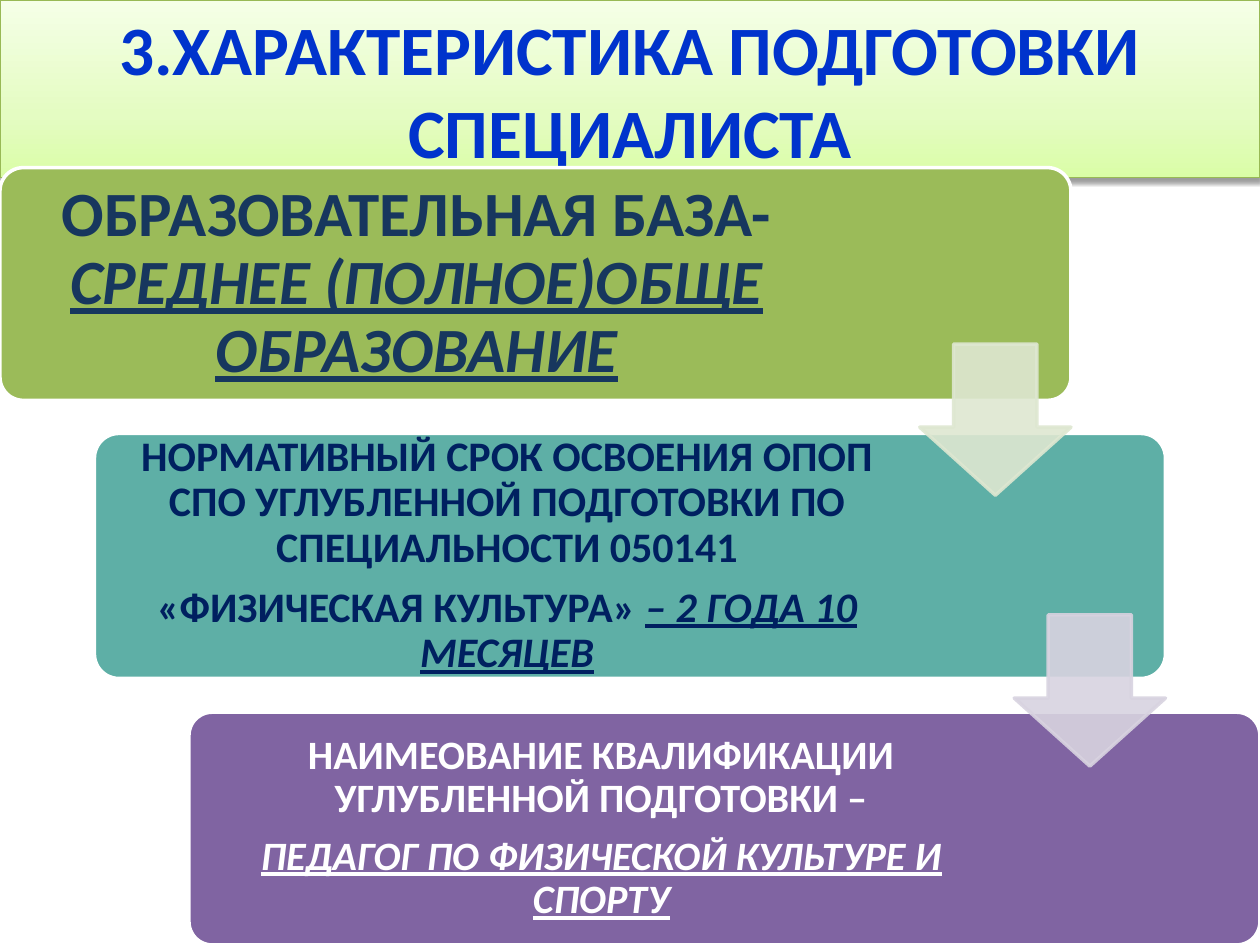
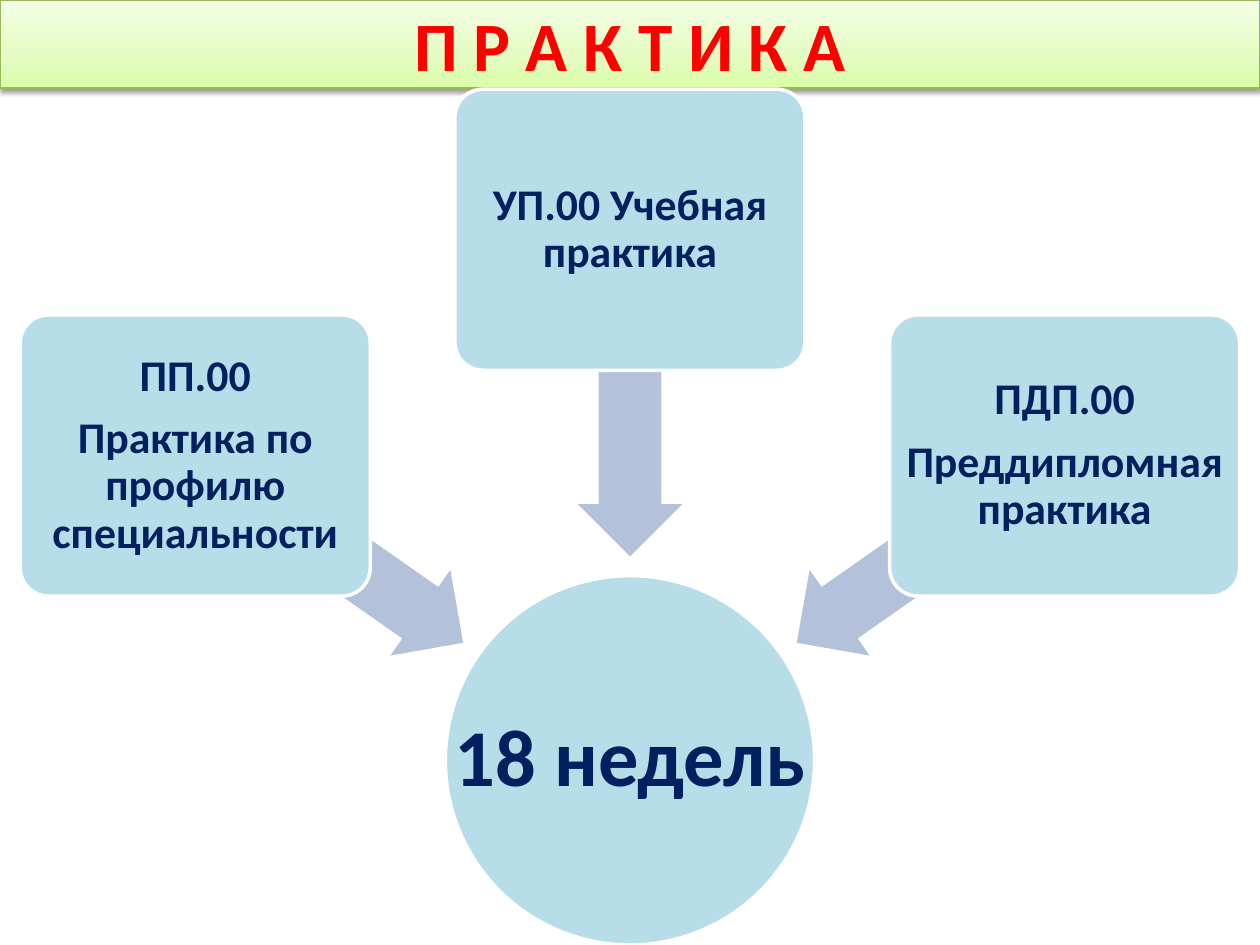
"""Build two slides on specialist training: programme steps and practice."""
from copy import deepcopy

from lxml.etree import SubElement
from pptx import Presentation
from pptx.dml.color import RGBColor
from pptx.enum.shapes import MSO_SHAPE as Shape
from pptx.enum.text import MSO_ANCHOR as Anchor, PP_ALIGN as Align
from pptx.oxml.ns import qn
from pptx.util import Pt

FONT = "Calibri"
WIDTH, HEIGHT = 720, 540

WHITE = RGBColor(0xFF, 0xFF, 0xFF)
BLACK = RGBColor(0x00, 0x00, 0x00)
NAVY = RGBColor(0x00, 0x20, 0x60)
SLATE = RGBColor(0x17, 0x37, 0x5E)
BLUE = RGBColor(0x00, 0x33, 0xCC)
RED = RGBColor(0xFF, 0x00, 0x00)
GREEN = RGBColor(0x9B, 0xBB, 0x59)
TEAL = RGBColor(0x5E, 0xAF, 0xA6)
PURPLE = RGBColor(0x80, 0x64, 0xA2)
PALE_GREEN = RGBColor(0xDE, 0xE7, 0xD1)
PALE_PURPLE = RGBColor(0xD8, 0xD3, 0xE0)
SKY = RGBColor(0xB7, 0xDE, 0xE8)
ARROW_BLUE = RGBColor(0xB3, 0xC1, 0xDB)
BAND_LINE = RGBColor(0x98, 0xB9, 0x55)
BAND_STOPS = [
    (0, RGBColor(0xDA, 0xFD, 0xA7)),
    (0.35, RGBColor(0xE4, 0xFC, 0xC2)),
    (1, RGBColor(0xF5, 0xFF, 0xE7)),
]

STEP_WIDTH, STEP_SHIFT = 612, 54
STEP_ARROW = 86.4
CARD_WIDTH, CARD_HEIGHT, CARD_PITCH = 200, 160.6, 248.4
HUB = 211


def add_box(slide, kind, left, top, width, height, fill=None, line=None,
            line_width=2, adjustments=()):
    """Add a preset shape without shadow; no line colour means no outline."""
    shape = slide.shapes.add_shape(kind, Pt(left), Pt(top), Pt(width), Pt(height))
    shape.shadow.inherit = False
    for index, value in enumerate(adjustments):
        shape.adjustments[index] = value
    if fill is not None:
        shape.fill.solid()
        shape.fill.fore_color.rgb = fill
    if line is None:
        shape.line.fill.background()
    else:
        shape.line.color.rgb = line
        shape.line.width = Pt(line_width)
    return shape


def write_text(shape, paragraphs, size, color, spacing=0.9, gap=0.35,
               left=0, right=0, wrap=True):
    """Write bold centred paragraphs of (text, emphasised) runs."""
    frame = shape.text_frame
    frame.word_wrap = wrap
    frame.vertical_anchor = Anchor.MIDDLE
    frame.margin_left, frame.margin_right = Pt(left), Pt(right)
    frame.margin_top = frame.margin_bottom = 0
    for index, runs in enumerate(paragraphs):
        paragraph = frame.add_paragraph() if index else frame.paragraphs[0]
        paragraph.alignment = Align.CENTER
        paragraph.line_spacing = spacing
        paragraph.space_before = Pt(round(size * gap, 1) if index else 0)
        for text, emphasised in runs:
            run = paragraph.add_run()
            run.text = text
            font = run.font
            font.name, font.size, font.bold = FONT, Pt(size), True
            font.color.rgb = color
            if emphasised:
                font.italic = font.underline = True


def set_opacity(parent, percent):
    """Set the opacity of every RGB colour below an element."""
    for color in parent.iter(qn("a:srgbClr")):
        SubElement(color, qn("a:alpha"), val=str(percent * 1000))


def add_title_band(slide, text, height, color):
    """Add the full-width gradient band with its soft shadow and title."""
    band = add_box(slide, Shape.RECTANGLE, 0, 0, WIDTH, height,
                   line=BAND_LINE, line_width=0.75)
    band.fill.gradient()
    band.fill.gradient_angle = 90
    properties = band._element.spPr
    stop_list = properties.find(qn("a:gradFill")).find(qn("a:gsLst"))
    stop_list.insert(1, deepcopy(stop_list[0]))
    for stop, (position, stop_color) in zip(band.fill.gradient_stops, BAND_STOPS):
        stop.position = position
        stop.color.rgb = stop_color
    shadow = SubElement(properties.find(qn("a:effectLst")), qn("a:outerShdw"),
                        blurRad=str(Pt(3.1)), dist=str(Pt(1.6)),
                        dir="5400000", rotWithShape="0")
    SubElement(shadow, qn("a:srgbClr"), val=str(BLACK))
    set_opacity(shadow, 38)
    write_text(band, [[(text, False)]], 39.6, color, spacing=1, left=7.2, right=7.2)


def add_step(slide, index, top, height, fill, paragraphs, size, color, left, right):
    """Add one step of the staircase, its text kept left of the arrows."""
    step = add_box(slide, Shape.ROUNDED_RECTANGLE, index * STEP_SHIFT, top,
                   STEP_WIDTH, height, fill, WHITE, adjustments=[0.1])
    write_text(step, paragraphs, size, color, left=left, right=right)


def add_step_arrow(slide, index, top, color):
    """Add a translucent down arrow flush with the right edge of a step."""
    left = index * STEP_SHIFT + STEP_WIDTH - STEP_ARROW
    arrow = add_box(slide, Shape.DOWN_ARROW, left, top, STEP_ARROW, STEP_ARROW,
                    color, color, adjustments=[0.55, 0.45])
    set_opacity(arrow._element.spPr, 90)


def add_card(slide, column, top, paragraphs):
    """Add a practice card, columns counted from the centre of the slide."""
    left = (WIDTH - CARD_WIDTH) / 2 + column * CARD_PITCH
    card = add_box(slide, Shape.ROUNDED_RECTANGLE, left, top, CARD_WIDTH,
                   CARD_HEIGHT, SKY, WHITE, adjustments=[0.1])
    write_text(card, paragraphs, 25, NAVY)


def add_hub_arrow(slide, column, center_y, rotation):
    """Add an arrow that points from a card to the hub."""
    width, height = 187.2, 59.8
    left = WIDTH / 2 + column * 172 - width / 2
    arrow = add_box(slide, Shape.LEFT_ARROW, left, center_y - height / 2,
                    width, height, ARROW_BLUE, adjustments=[0.6, 0.5])
    arrow.rotation = rotation


def build_training_slide(slide):
    """Lay out the three training characteristics as a staircase."""
    add_title_band(slide, "3.ХАРАКТЕРИСТИКА ПОДГОТОВКИ СПЕЦИАЛИСТА", 101.5, BLUE)
    add_step(slide, 0, 95.8, 133, GREEN, [
        [("ОБРАЗОВАТЕЛЬНАЯ БАЗА- ", False),
         ("СРЕДНЕЕ (ПОЛНОЕ)ОБЩЕ ОБРАЗОВАНИЕ", True)],
    ], 36, SLATE, left=7, right=143)
    add_step(slide, 1, 247.7, 140, TEAL, [
        [("НОРМАТИВНЫЙ СРОК ОСВОЕНИЯ ОПОП СПО УГЛУБЛЕННОЙ ПОДГОТОВКИ "
          "ПО СПЕЦИАЛЬНОСТИ 050141", False)],
        [("«ФИЗИЧЕСКАЯ КУЛЬТУРА» ", False), ("– 2 ГОДА 10 МЕСЯЦЕВ", True)],
    ], 24, NAVY, left=3, right=143.5)
    add_step(slide, 2, 407, 133, PURPLE, [
        [("НАИМЕОВАНИЕ КВАЛИФИКАЦИИ УГЛУБЛЕННОЙ ПОДГОТОВКИ –", False)],
        [("ПЕДАГОГ ПО ФИЗИЧЕСКОЙ КУЛЬТУРЕ И СПОРТУ", True)],
    ], 23, WHITE, left=3, right=143.5)
    add_step_arrow(slide, 0, 196.6, PALE_GREEN)
    add_step_arrow(slide, 1, 351.4, PALE_PURPLE)


def build_practice_slide(slide):
    """Lay out three practice cards around the total duration."""
    add_title_band(slide, "П Р А К Т И К А", 50.4, RED)
    hub = add_box(slide, Shape.OVAL, (WIDTH - HUB) / 2, HEIGHT - HUB, HUB, HUB,
                  SKY, WHITE)
    write_text(hub, [[("18 недель", False)]], 46, NAVY, wrap=False)
    practices = [
        (-1, 180, 313.6, 215, ["ПП.00", "Практика по профилю специальности"]),
        (0, 51, 224.3, 270, ["УП.00 Учебная практика"]),
        (1, 180, 313.6, 325, ["ПДП.00", "Преддипломная практика"]),
    ]
    for column, top, arrow_y, rotation, lines in practices:
        add_hub_arrow(slide, column, arrow_y, rotation)
        add_card(slide, column, top, [[(line, False)] for line in lines])


def main():
    """Create the presentation and save it."""
    presentation = Presentation()
    presentation.slide_width, presentation.slide_height = Pt(WIDTH), Pt(HEIGHT)
    blank = presentation.slide_layouts[6]
    for build in (build_training_slide, build_practice_slide):
        build(presentation.slides.add_slide(blank))
    presentation.save("out.pptx")


if __name__ == "__main__":
    main()
